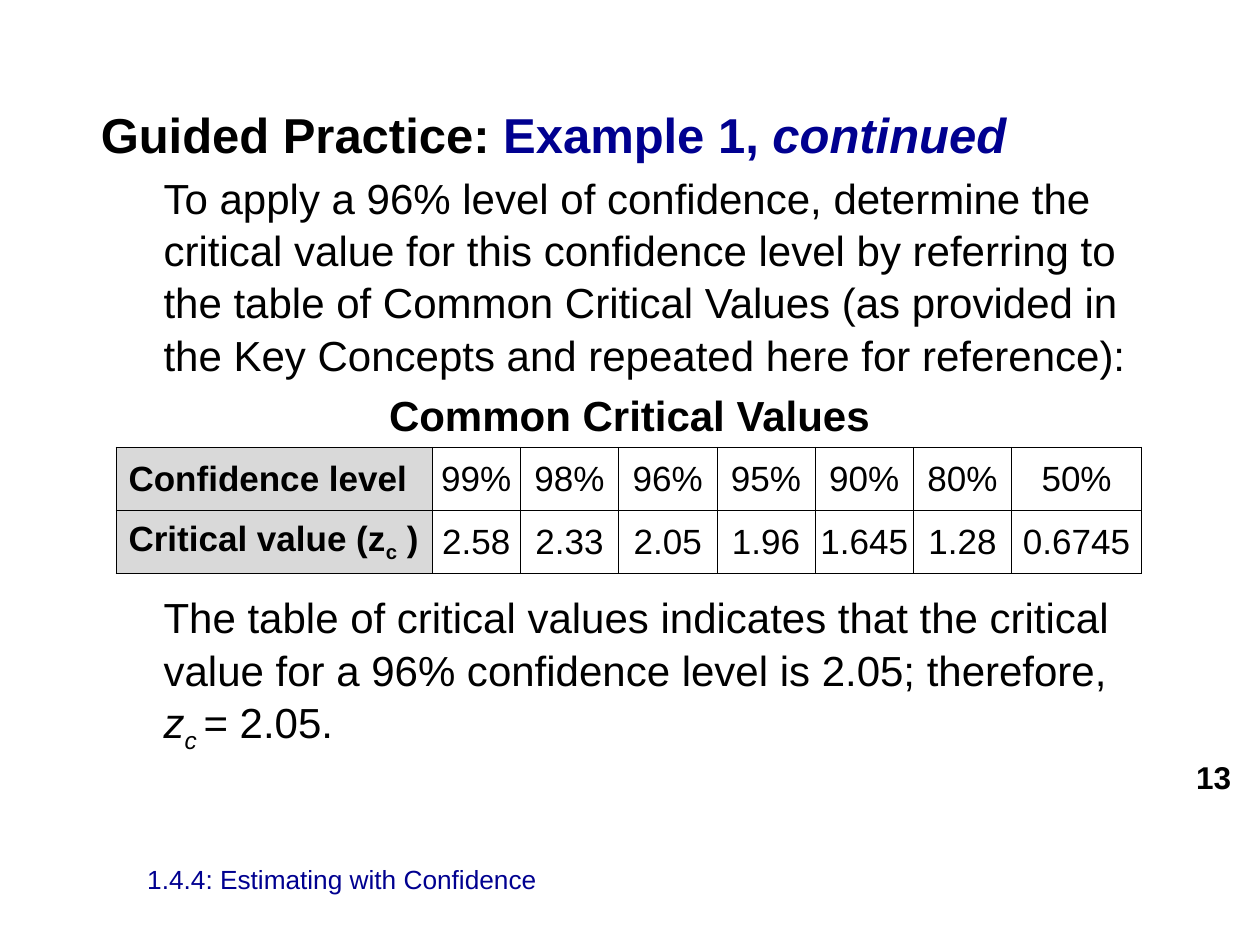
from lxml import etree
from pptx import Presentation
from pptx.dml.color import RGBColor
from pptx.enum.text import MSO_ANCHOR as Anchor, PP_ALIGN as Align
from pptx.oxml.ns import qn
from pptx.util import Inches, Pt

COLORS = {"text": "000000", "accent": "000090", "header": "D9D9D9",
          "cell": "FFFFFF", "border": "000000"}
FONT = "Arial"
LINE_SPACING = 1.04

CRITICAL_VALUES = [("99%", "2.58"), ("98%", "2.33"), ("96%", "2.05"),
                   ("95%", "1.96"), ("90%", "1.645"), ("80%", "1.28"),
                   ("50%", "0.6745")]
COLUMN_WIDTHS = [2.51, 0.7] + [0.78] * 5 + [1.03]
ROW_HEIGHT = 0.5


def rgb(name):
    return RGBColor.from_string(COLORS[name])


def set_font(font, size, color="text", bold=False):
    font.name, font.size, font.bold = FONT, Pt(size), bold
    font.color.rgb = rgb(color)


def add_run(paragraph, text, italic=None, color=None, subscript=False):
    run = paragraph.add_run()
    run.text = text
    if italic:
        run.font.italic = True
    if color:
        run.font.color.rgb = rgb(color)
    if subscript:
        run._r.get_or_add_rPr().set("baseline", "-25000")


def prepare_frame(frame, anchor=Anchor.TOP, inset=0.0):
    frame.word_wrap = True
    frame.vertical_anchor = anchor
    frame.margin_left = frame.margin_right = Inches(inset)
    frame.margin_top = frame.margin_bottom = 0
    return frame


def add_text_box(slide, left, top, width, height, **frame_options):
    box = slide.shapes.add_textbox(Inches(left), Inches(top),
                                   Inches(width), Inches(height))
    return prepare_frame(box.text_frame, **frame_options)


def add_title(slide):
    title = slide.shapes.title
    title.left, title.top = Inches(0.7), Inches(0.81)
    title.width, title.height = Inches(8.59), Inches(0.5)
    heading = prepare_frame(title.text_frame, inset=0.1).paragraphs[0]
    heading.alignment = Align.LEFT
    heading.line_spacing = LINE_SPACING
    set_font(heading.font, 28, bold=True)
    add_run(heading, "Guided Practice: ")
    add_run(heading, "Example 1, ", color="accent")
    add_run(heading, "continued", italic=True, color="accent")


def format_body(paragraph, indent=0.5, bold=False):
    paragraph._p.get_or_add_pPr().set("marL", str(Inches(indent)))
    paragraph.line_spacing = LINE_SPACING
    set_font(paragraph.font, 24, bold=bold)


def add_introduction(slide):
    frame = add_text_box(slide, 0.7, 1.35, 8.59, 2.1, inset=0.1)
    introduction = frame.paragraphs[0]
    format_body(introduction)
    add_run(introduction,
            "To apply a 96% level of confidence, determine the critical value "
            "for this confidence level by referring to the table of Common "
            "Critical Values (as provided in the Key Concepts and repeated "
            "here for reference):")
    caption = frame.add_paragraph()
    format_body(caption, indent=0, bold=True)
    caption.alignment = Align.CENTER
    caption.space_before = Pt(4.8)
    add_run(caption, "Common Critical Values")


def add_conclusion(slide):
    frame = add_text_box(slide, 0.7, 4.68, 8.59, 1.25, inset=0.1)
    conclusion = frame.paragraphs[0]
    format_body(conclusion)
    add_run(conclusion,
            "The table of critical values indicates that the critical value "
            "for a 96% confidence level is 2.05; therefore,")
    conclusion.add_line_break()
    add_run(conclusion, "z", italic=True)
    add_run(conclusion, "c ", italic=True, subscript=True)
    add_run(conclusion, "= 2.05.")


def format_cell(cell, fill):
    # Borders come before the fill in the cell properties
    properties = cell._tc.get_or_add_tcPr()
    for side in ("a:lnL", "a:lnR", "a:lnT", "a:lnB"):
        line = etree.SubElement(properties, qn(side), w=str(Pt(0.5)))
        solid = etree.SubElement(line, qn("a:solidFill"))
        etree.SubElement(solid, qn("a:srgbClr"), val=COLORS["border"])
    cell.fill.solid()
    cell.fill.fore_color.rgb = rgb(fill)
    cell.vertical_anchor = Anchor.MIDDLE


def add_header_cell(cell, parts):
    format_cell(cell, "header")
    label = cell.text_frame.paragraphs[0]
    set_font(label.font, 20, bold=True)
    for text, subscript in parts:
        add_run(label, text, subscript=subscript)


def add_value_cell(cell, text):
    format_cell(cell, "cell")
    cell.margin_left = cell.margin_right = cell.margin_top = Inches(0.01)
    cell.margin_bottom = 0
    value = cell.text_frame.paragraphs[0]
    value.alignment = Align.CENTER
    set_font(value.font, 20)
    add_run(value, text)


def add_critical_values_table(slide):
    headers = [[("Confidence level", False)],
               [("Critical value (z", False), ("c", True), (" )", False)]]
    table = slide.shapes.add_table(
        len(headers), len(COLUMN_WIDTHS), Inches(0.92), Inches(3.55),
        Inches(sum(COLUMN_WIDTHS)), Inches(ROW_HEIGHT * len(headers))).table
    table.first_row = table.horz_banding = False
    for column, width in zip(table.columns, COLUMN_WIDTHS):
        column.width = Inches(width)
    for row, (header, values) in enumerate(zip(headers, zip(*CRITICAL_VALUES))):
        table.rows[row].height = Inches(ROW_HEIGHT)
        add_header_cell(table.cell(row, 0), header)
        for column, value in enumerate(values, start=1):
            add_value_cell(table.cell(row, column), value)


def add_footer(slide):
    number = add_text_box(slide, 9.07, 6.01, 0.8, 0.31,
                          anchor=Anchor.MIDDLE, inset=0.1).paragraphs[0]
    number.alignment = Align.RIGHT
    set_font(number.font, 18, bold=True)
    add_run(number, "13")

    lesson = add_text_box(slide, 1.07, 6.83, 6.28, 0.29,
                          anchor=Anchor.MIDDLE, inset=0.1).paragraphs[0]
    set_font(lesson.font, 15, "accent")
    add_run(lesson, "1.4.4: Estimating with Confidence")


def main():
    presentation = Presentation()
    presentation.slide_width = Inches(10)
    presentation.slide_height = Inches(7.5)
    slide = presentation.slides.add_slide(presentation.slide_layouts[5])

    add_title(slide)
    add_introduction(slide)
    add_critical_values_table(slide)
    add_conclusion(slide)
    add_footer(slide)

    presentation.save("out.pptx")


if __name__ == "__main__":
    main()
